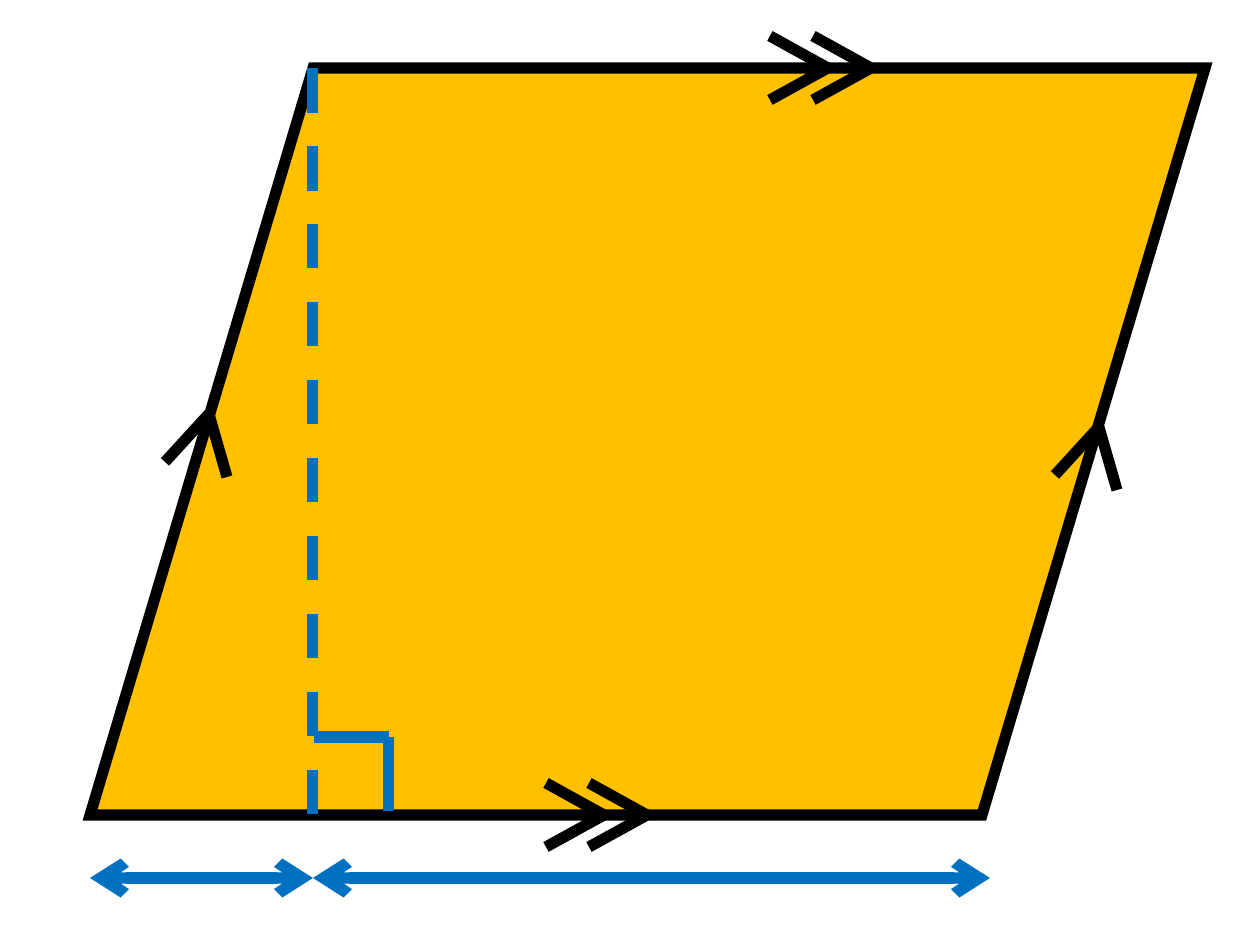
from dataclasses import dataclass

from lxml.etree import SubElement
from pptx import Presentation
from pptx.dml.color import RGBColor
from pptx.enum.dml import MSO_LINE
from pptx.enum.shapes import MSO_CONNECTOR, MSO_SHAPE
from pptx.oxml.ns import qn
from pptx.util import Pt

EMU_PER_PX = 3426


def px(length):
    return length * EMU_PER_PX


@dataclass(frozen=True)
class Theme:
    area: RGBColor = RGBColor(0xFF, 0xC0, 0x00)
    outline: RGBColor = RGBColor(0x00, 0x00, 0x00)
    measure: RGBColor = RGBColor(0x00, 0x70, 0xC0)
    stroke: int = Pt(3)


class Diagram:
    def __init__(self, slide, theme):
        self.slide = slide
        self.theme = theme

    def parallelogram(self, left, top, width, height):
        body = self.slide.shapes.add_shape(
            MSO_SHAPE.FLOWCHART_DATA, px(left), px(top), px(width), px(height))
        body.shadow.inherit = False
        body.fill.solid()
        body.fill.fore_color.rgb = self.theme.area
        body.line.color.rgb = self.theme.outline
        body.line.width = self.theme.stroke
        SubElement(body.line._get_or_add_ln(), qn("a:miter"), lim="800000")

    def segment(self, start, end, color, shapes=None, dashed=False, arrows=False):
        shapes = self.slide.shapes if shapes is None else shapes
        stroke = shapes.add_connector(
            MSO_CONNECTOR.STRAIGHT, *map(px, (*start, *end)))
        stroke.line.color.rgb = color
        stroke.line.width = self.theme.stroke
        if dashed:
            stroke.line.dash_style = MSO_LINE.DASH
        if arrows:
            ln = stroke.line._get_or_add_ln()
            for tip in ("a:headEnd", "a:tailEnd"):
                SubElement(ln, qn(tip), type="arrow")
        SubElement(stroke._element.spPr, qn("a:effectLst"))

    def mark(self, tips, tails, color):
        """Group of strokes from each tip to points offset from it."""
        group = self.slide.shapes.add_group_shape()
        for x, y in tips:
            for dx, dy in tails:
                self.segment((x, y), (x + dx, y + dy), color, group.shapes)


def main():
    prs = Presentation()
    prs.slide_width, prs.slide_height = px(1260), px(945)
    theme = Theme()
    diagram = Diagram(prs.slides.add_slide(prs.slide_layouts[6]), theme)

    # Parallelogram
    left, top, width, height = 90, 68, 1115, 747
    base = top + height
    foot = left + width // 5
    diagram.parallelogram(left, top, width, height)

    # Single marks on the slanted sides
    for apex in ((209, 414), (1099, 427)):
        diagram.mark([apex], [(18, 63), (-44, 48)], theme.outline)

    # Double marks on the horizontal sides
    for tip_x, side_y in ((828, top), (604, base)):
        diagram.mark([(tip_x, side_y), (tip_x + 43, side_y)],
                     [(-58, 32), (-58, -32)], theme.outline)

    # Height
    diagram.segment((foot, top), (foot, base), theme.measure, dashed=True)

    # Base lengths
    for start_x, end_x in ((left, foot), (foot, 990)):
        diagram.segment((start_x, 878), (end_x, 878), theme.measure, arrows=True)

    # Right angle
    diagram.mark([(389, 737)], [(-75, 0), (0, 74)], theme.measure)

    prs.save("out.pptx")


if __name__ == "__main__":
    main()
